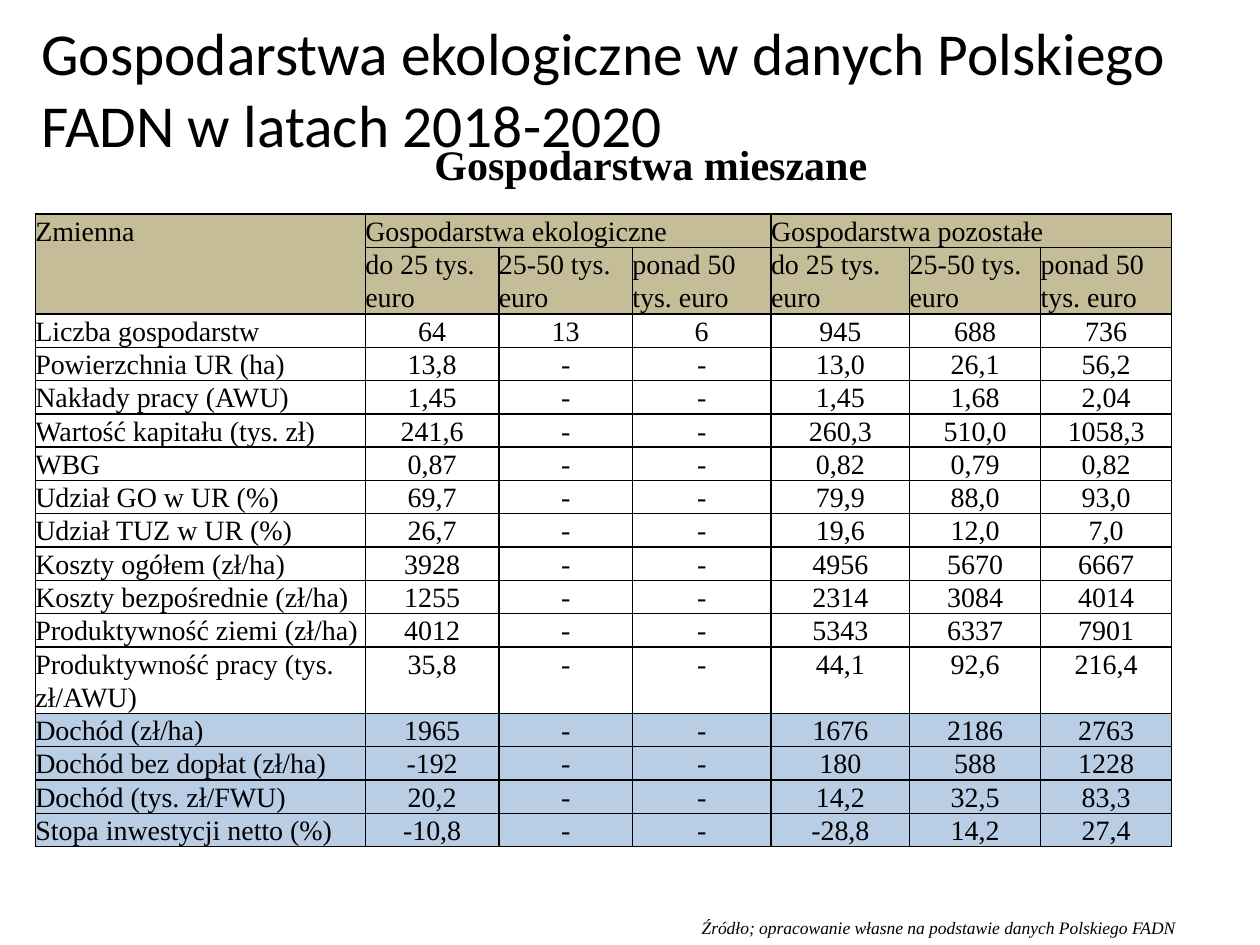
from dataclasses import dataclass, field

from lxml.etree import SubElement
from pptx import Presentation
from pptx.dml.color import RGBColor
from pptx.enum.text import MSO_AUTO_SIZE, PP_ALIGN
from pptx.oxml.ns import qn
from pptx.util import Inches, Pt

BLACK = RGBColor(0x00, 0x00, 0x00)
HEADER_TAN = RGBColor(0xC4, 0xBD, 0x97)
INCOME_BLUE = RGBColor(0xB9, 0xCD, 0xE5)
SERIF = "Times New Roman"

COLUMN_WIDTHS = (2.62, 1.06, 1.06, 1.1, 1.1, 1.04, 1.04)
ROW_HEIGHT = 0.18
SUBHEADER_HEIGHT = 0.37
HEADER_ROWS = 2
FIRST_INCOME_ROW = 13
SIZE_CLASSES = ("do 25 tys. euro", "25-50 tys. euro", "ponad 50 tys. euro")


@dataclass(frozen=True)
class Caption:
    text: str
    left: float
    top: float
    width: float
    height: float
    font: dict = field(default_factory=dict)


@dataclass(frozen=True)
class Variable:
    name: str
    organic: tuple[str, ...]
    other: tuple[str, ...]


def small_sample(value: str) -> tuple[str, ...]:
    return value, "-", "-"


CAPTIONS = (
    Caption("Źródło; opracowanie własne na podstawie danych Polskiego FADN",
            5.47, 7.23, 6.06, 0.27, {"name": SERIF, "size": Pt(10), "italic": True}),
    Caption("Gospodarstwa mieszane",
            3.35, 1.05, 6.3, 0.5, {"name": SERIF, "size": Pt(24), "bold": True}),
    Caption("Gospodarstwa ekologiczne w danych Polskiego FADN w latach 2018-2020",
            0.23, 0.08, 10.04, 1.25, {"name": "Calibri", "size": Pt(34)}),
)

VARIABLES = (
    Variable("Liczba gospodarstw", ("64", "13", "6"), ("945", "688", "736")),
    Variable("Powierzchnia UR (ha)", small_sample("13,8"), ("13,0", "26,1", "56,2")),
    Variable("Nakłady pracy (AWU)", small_sample("1,45"), ("1,45", "1,68", "2,04")),
    Variable("Wartość kapitału (tys. zł)", small_sample("241,6"), ("260,3", "510,0", "1058,3")),
    Variable("WBG", small_sample("0,87"), ("0,82", "0,79", "0,82")),
    Variable("Udział GO w UR (%)", small_sample("69,7"), ("79,9", "88,0", "93,0")),
    Variable("Udział TUZ w UR (%)", small_sample("26,7"), ("19,6", "12,0", "7,0")),
    Variable("Koszty ogółem (zł/ha)", small_sample("3928"), ("4956", "5670", "6667")),
    Variable("Koszty bezpośrednie (zł/ha)", small_sample("1255"), ("2314", "3084", "4014")),
    Variable("Produktywność ziemi (zł/ha)", small_sample("4012"), ("5343", "6337", "7901")),
    Variable("Produktywność pracy (tys. zł/AWU)", small_sample("35,8"), ("44,1", "92,6", "216,4")),
    Variable("Dochód (zł/ha)", small_sample("1965"), ("1676", "2186", "2763")),
    Variable("Dochód bez dopłat (zł/ha)", small_sample("-192"), ("180", "588", "1228")),
    Variable("Dochód (tys. zł/FWU)", small_sample("20,2"), ("14,2", "32,5", "83,3")),
    Variable("Stopa inwestycji netto (%)", small_sample("-10,8"), ("-28,8", "14,2", "27,4")),
)


def apply_format(target: object, values: dict) -> None:
    for name, value in values.items():
        setattr(target, name, value)


def write_text(paragraph, text: str, font: dict) -> None:
    run = paragraph.add_run()
    run.text = text
    apply_format(run.font, font)
    run.font.color.rgb = BLACK


def add_caption(slide, caption: Caption) -> None:
    shape = slide.shapes.add_textbox(
        Inches(caption.left), Inches(caption.top),
        Inches(caption.width), Inches(caption.height))
    apply_format(shape.text_frame,
                 {"word_wrap": True, "auto_size": MSO_AUTO_SIZE.SHAPE_TO_FIT_TEXT})
    write_text(shape.text_frame.paragraphs[0], caption.text, caption.font)


def add_borders(cell) -> None:
    properties = cell._tc.get_or_add_tcPr()
    for side in ("a:lnL", "a:lnR", "a:lnT", "a:lnB"):
        line = SubElement(properties, qn(side), w=str(Pt(1)))
        fill = SubElement(line, qn("a:solidFill"))
        SubElement(fill, qn("a:srgbClr"), val=str(BLACK))


def format_cell(cell, text: str, row: int, column: int) -> None:
    apply_format(cell, {"margin_left": 0, "margin_right": 0,
                        "margin_top": 0, "margin_bottom": 0})
    add_borders(cell)
    if row < HEADER_ROWS or row >= FIRST_INCOME_ROW:
        cell.fill.solid()
        cell.fill.fore_color.rgb = HEADER_TAN if row < HEADER_ROWS else INCOME_BLUE
    else:
        cell.fill.background()
    paragraph = cell.text_frame.paragraphs[0]
    centred = row >= HEADER_ROWS and column > 0
    apply_format(paragraph, {
        "alignment": PP_ALIGN.CENTER if centred else PP_ALIGN.LEFT,
        "line_spacing": 1.07, "space_after": Pt(8)})
    if text:
        write_text(paragraph, text, {"name": SERIF, "size": Pt(16)})


def add_farm_table(slide) -> None:
    rows = [
        ("Zmienna", "Gospodarstwa ekologiczne", "", "", "Gospodarstwa pozostałe", "", ""),
        ("", *SIZE_CLASSES, *SIZE_CLASSES),
        *((variable.name, *variable.organic, *variable.other) for variable in VARIABLES),
    ]
    shape = slide.shapes.add_table(
        len(rows), len(COLUMN_WIDTHS),
        Inches(0.28), Inches(1.7), Inches(9), Inches(5.18))
    table = shape.table
    apply_format(table, {"first_row": False, "horz_banding": False})
    for column, width in zip(table.columns, COLUMN_WIDTHS):
        column.width = Inches(width)
    for index, texts in enumerate(rows):
        table.rows[index].height = Inches(SUBHEADER_HEIGHT if index == 1 else ROW_HEIGHT)
        for column, text in enumerate(texts):
            format_cell(table.cell(index, column), text, index, column)
    for start, end in (((0, 0), (1, 0)), ((0, 1), (0, 3)), ((0, 4), (0, 6))):
        table.cell(*start).merge(table.cell(*end))
    shape.height = Inches(5.18)


def main() -> None:
    presentation = Presentation()
    apply_format(presentation, {"slide_width": Inches(10), "slide_height": Inches(7.5)})
    slide = presentation.slides.add_slide(presentation.slide_layouts[6])
    add_farm_table(slide)
    for caption in CAPTIONS:
        add_caption(slide, caption)
    presentation.save("out.pptx")


if __name__ == "__main__":
    main()
